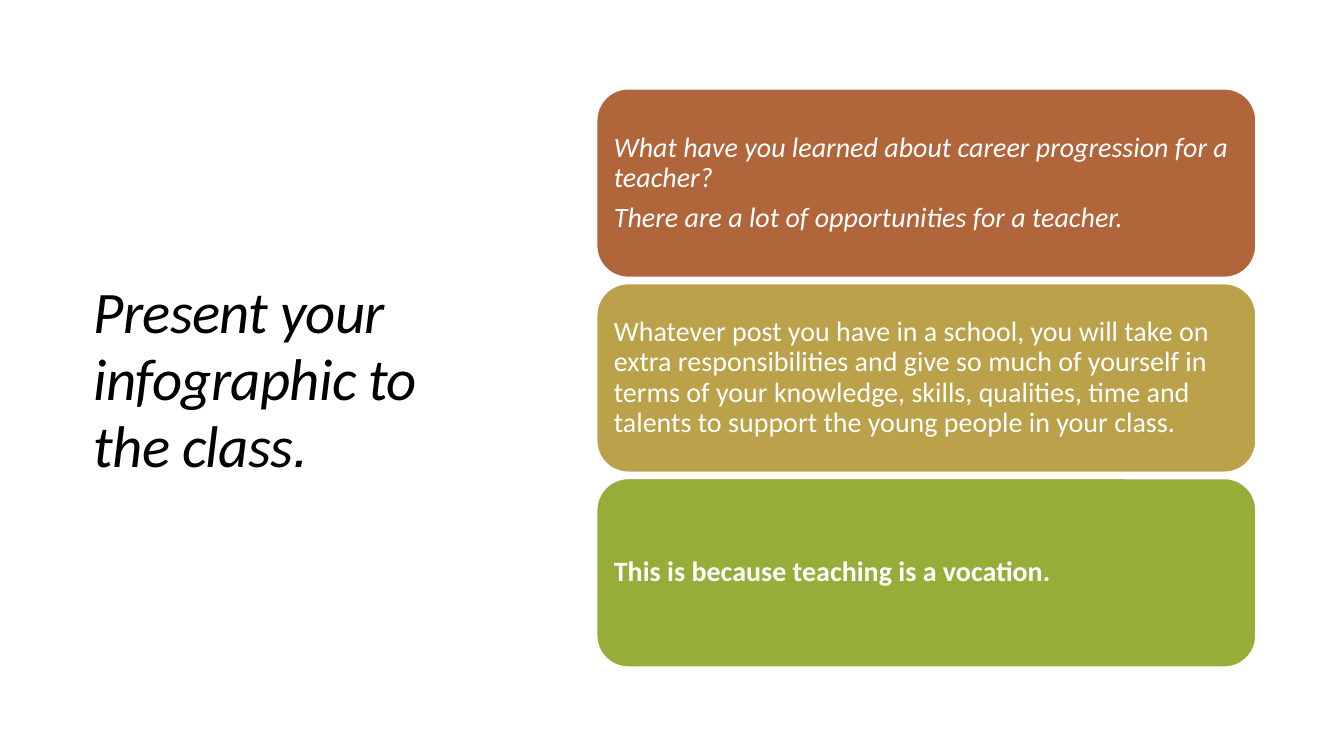
from pptx import Presentation
from pptx.dml.color import RGBColor
from pptx.enum.shapes import MSO_SHAPE
from pptx.enum.text import MSO_ANCHOR, PP_ALIGN
from pptx.util import Cm, Pt

CARDS = [
    ("B1653B", ["What have you learned about career progression for a teacher?",
                "There are a lot of opportunities for a teacher."], {"italic": True}),
    ("BBA149", ["Whatever post you have in a school, you will take on extra "
                "responsibilities and give so much of yourself in terms of your "
                "knowledge, skills, qualities, time and talents to support the "
                "young people in your class."], {}),
    ("97AD39", ["This is because teaching is a vocation."], {"bold": True}),
]


def rgb(color):
    """Turn a hex string into a colour."""
    return RGBColor.from_string(color)


def add_run(p, text, size=20, color="FFFFFF", font="Calibri",
            bold=False, italic=False, spacing=None):
    """Add formatted text to a paragraph."""
    r = p.add_run()
    r.text = text
    r.font.name = font
    r.font.size = Pt(size)
    r.font.bold = bold
    r.font.italic = italic
    r.font.color.rgb = rgb(color)
    if spacing is not None:
        r.font._element.set("spc", str(round(spacing * 100)))


def add_title(s):
    """Add the heading on the left."""
    tf = s.shapes.add_textbox(Cm(2.11), Cm(2.16), Cm(10.85), Cm(14.83)).text_frame
    tf.word_wrap = True
    tf.vertical_anchor = MSO_ANCHOR.MIDDLE
    p = tf.paragraphs[0]
    p.line_spacing = 0.95
    style = {"size": 42, "color": "000000", "italic": True, "spacing": -0.5}
    add_run(p, "Present your infographic to the class", **style)
    add_run(p, ".", font="Arial", **style)


def add_card(s, top, color, texts, style):
    """Add a rounded card with one paragraph per text."""
    sp = s.shapes.add_shape(MSO_SHAPE.ROUNDED_RECTANGLE,
                            Cm(15.04), Cm(top), Cm(16.61), Cm(4.75))
    sp.shadow.inherit = False
    sp.fill.solid()
    sp.fill.fore_color.rgb = rgb(color)
    sp.line.color.rgb = rgb("FFFFFF")
    sp.line.width = Pt(1)
    tf = sp.text_frame
    tf.word_wrap = True
    tf.vertical_anchor = MSO_ANCHOR.MIDDLE
    tf.margin_left = tf.margin_right = tf.margin_top = tf.margin_bottom = Cm(0.2)
    for i, text in enumerate(texts):
        p = tf.add_paragraph() if i else tf.paragraphs[0]
        p.alignment = PP_ALIGN.LEFT
        p.line_spacing = 0.9
        p.space_after = Pt(7)
        add_run(p, text, **style)


def main():
    """Build the slide."""
    prs = Presentation()
    prs.slide_width, prs.slide_height = Cm(33.87), Cm(19.05)
    s = prs.slides.add_slide(prs.slide_layouts[6])
    add_title(s)
    for i, (color, texts, style) in enumerate(CARDS):
        add_card(s, 2.24 + i * 4.91, color, texts, style)
    prs.save("out.pptx")


if __name__ == "__main__":
    main()
